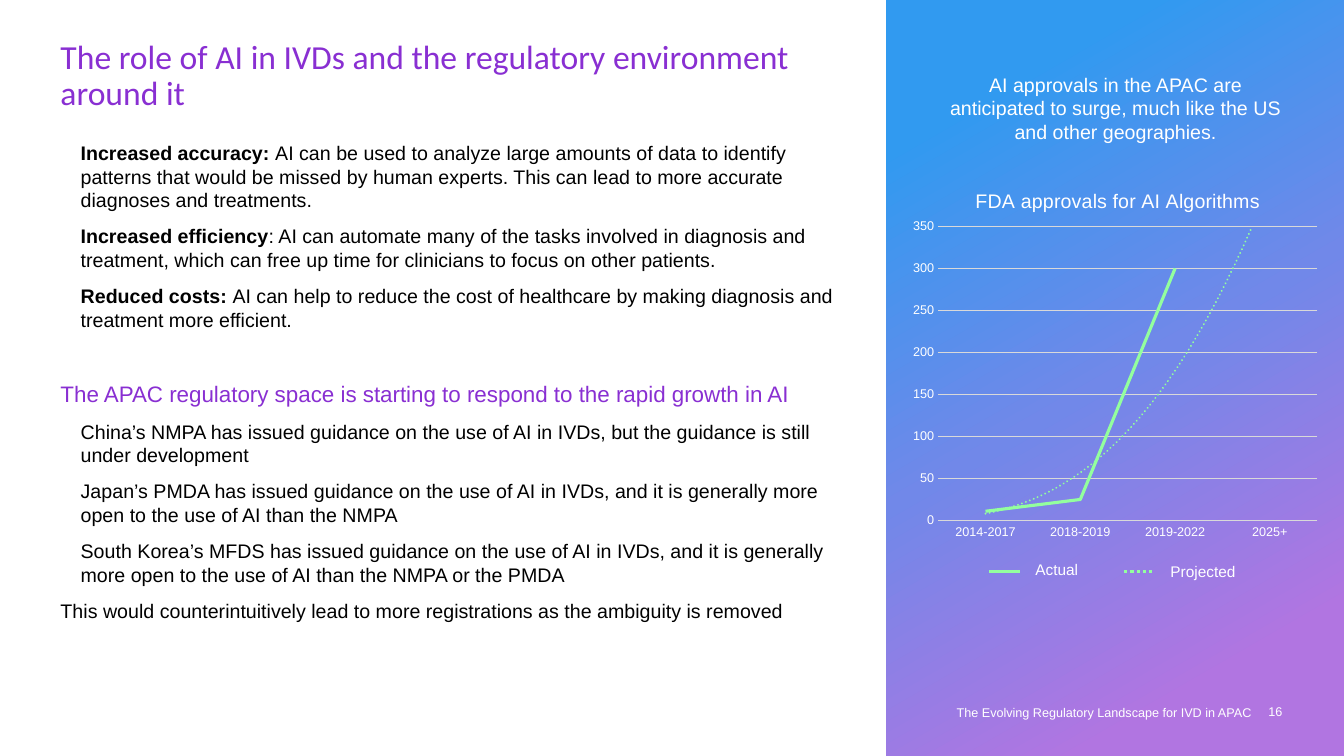
from copy import deepcopy

from lxml.etree import SubElement
from pptx import Presentation
from pptx.chart.data import CategoryChartData
from pptx.dml.color import RGBColor
from pptx.enum.chart import XL_CHART_TYPE, XL_TICK_MARK
from pptx.enum.dml import MSO_LINE
from pptx.enum.shapes import MSO_CONNECTOR, MSO_SHAPE
from pptx.enum.text import MSO_ANCHOR, MSO_AUTO_SIZE, PP_ALIGN
from pptx.oxml import parse_xml
from pptx.oxml.ns import nsdecls, qn
from pptx.util import Inches, Pt

COLORS = {"purple": "892FD2", "black": "000000", "white": "FFFFFF", "green": "93FF9E",
          "grid": "D9D9D9", "sky": "319AF0", "periwinkle": "7188E9", "lilac": "B175E1"}
BENEFITS = [
    ("Increased accuracy: ", "AI can be used to analyze large amounts of data to identify patterns that "
     "would be missed by human experts. This can lead to more accurate diagnoses and treatments."),
    ("Increased efficiency", ": AI can automate many of the tasks involved in diagnosis and treatment, "
     "which can free up time for clinicians to focus on other patients."),
    ("Reduced costs: ", "AI can help to reduce the cost of healthcare by making diagnosis and treatment "
     "more efficient."),
]
REGULATORS = [
    "China’s NMPA has issued guidance on the use of AI in IVDs, but the guidance is still under development",
    "Japan’s PMDA has issued guidance on the use of AI in IVDs, and it is generally more open to the use "
    "of AI than the NMPA",
    "South Korea’s MFDS has issued guidance on the use of AI in IVDs, and it is generally more open to the "
    "use of AI than the NMPA or the PMDA",
]


def rgb(name):
    """Return the palette colour with this name."""
    return RGBColor.from_string(COLORS[name])


def style_font(font, size, color, bold=False, face="Arial"):
    """Format one font."""
    font.size, font.bold, font.name = Pt(size), bold, face
    font.color.rgb = rgb(color)


def write(paragraph, text, lead="", size=14, color="black", face="Arial",
          align=PP_ALIGN.LEFT, before=0, indent=0):
    """Fill a paragraph with text after an optional bold lead."""
    paragraph.alignment, paragraph.space_before = align, Pt(before)
    if indent:
        paragraph._p.get_or_add_pPr().set("marL", str(Inches(indent)))
    for words, bold in ((lead, True), (text, False)):
        if words:
            run = paragraph.add_run()
            run.text = words
            style_font(run.font, size, color, bold, face)


def set_layout(holder, **fractions):
    """Place a chart part by fractions of the chart area."""
    layout = holder.find(qn("c:layout"))
    if layout is None:
        layout = SubElement(holder, qn("c:layout"))
    text = holder.find(qn("c:tx"))
    if text is None:
        holder.insert(0, layout)
    else:
        text.addnext(layout)
    manual = SubElement(layout, qn("c:manualLayout"))
    if "w" in fractions:
        SubElement(manual, qn("c:layoutTarget")).set("val", "inner")
    for side in "xy":
        SubElement(manual, qn(f"c:{side}Mode")).set("val", "edge")
    for side, value in fractions.items():
        SubElement(manual, qn(f"c:{side}")).set("val", str(value))


class SlideBuilder:
    """Holds the current slide and its style."""

    def __init__(self, slide):
        """Keep the slide to build on."""
        self.slide = slide

    def title(self, text, left, top, width, height):
        """Place and fill the title."""
        title = self.slide.shapes.title
        title.left, title.top, title.width, title.height = map(Inches, (left, top, width, height))
        frame = self.frame(title, 0, MSO_ANCHOR.TOP)
        frame.paragraphs[0].line_spacing = 0.9
        write(frame.paragraphs[0], text, size=24, color="purple", face="Calibri")

    def frame(self, shape, inset, anchor):
        """Set wrapping, insets and anchor of a text frame."""
        frame = shape.text_frame
        frame.word_wrap, frame.auto_size = True, MSO_AUTO_SIZE.NONE
        frame.vertical_anchor = anchor
        frame.margin_left = frame.margin_right = Inches(inset)
        frame.margin_top = frame.margin_bottom = Inches(inset / 2)
        return frame

    def text(self, paragraphs, left, top, width, height, inset=0.1, anchor=MSO_ANCHOR.TOP):
        """Add a text box from a list of paragraph formats."""
        box = self.slide.shapes.add_textbox(*map(Inches, (left, top, width, height)))
        frame = self.frame(box, inset, anchor)
        for index, content in enumerate(paragraphs):
            write(frame.add_paragraph() if index else frame.paragraphs[0], **content)

    def panel(self, left, top, width, height, colors, angle):
        """Add a rectangle with a three-stop gradient."""
        panel = self.slide.shapes.add_shape(MSO_SHAPE.RECTANGLE, *map(Inches, (left, top, width, height)))
        panel.shadow.inherit = False
        panel.line.fill.background()
        panel.fill.gradient()
        panel.fill.gradient_angle = angle
        stop_list = panel._element.spPr.find(qn("a:gradFill")).find(qn("a:gsLst"))
        stop_list.append(deepcopy(stop_list[-1]))
        for stop, color, position in zip(panel.fill.gradient_stops, colors, (0.15, 0.5, 0.85)):
            stop.color.rgb, stop.position = rgb(color), position

    def legend_key(self, left, top, length, dash=None):
        """Add a short line for the legend."""
        key = self.slide.shapes.add_connector(
            MSO_CONNECTOR.STRAIGHT, *map(Inches, (left, top, left + length, top)))
        key.line.color.rgb, key.line.width = rgb("green"), Pt(2.25)
        if dash:
            key.line.dash_style = dash
        SubElement(key._element.spPr, qn("a:effectLst"))

    def approvals_chart(self, heading, periods, approvals, left, top, width, height):
        """Add the approvals line chart with its power trend."""
        data = CategoryChartData()
        data.categories = periods
        data.add_series("Series 1", approvals)
        chart = self.slide.shapes.add_chart(
            XL_CHART_TYPE.LINE, *map(Inches, (left, top, width, height)), data).chart
        style_font(chart.font, 10, "black")
        chart.has_legend = False
        chart.has_title = True
        write(chart.chart_title.text_frame.paragraphs[0], heading, color="white", align=PP_ALIGN.CENTER)
        chart.chart_title.include_in_layout = False
        set_layout(chart.chart_title._element, x=0.16, y=0.05)
        set_layout(chart._chartSpace.chart.plotArea, x=0.08, y=0.16, w=0.9, h=0.77)
        for axis in (chart.category_axis, chart.value_axis):
            axis.major_tick_mark = axis.minor_tick_mark = XL_TICK_MARK.NONE
            style_font(axis.tick_labels.font, 9, "white")
        values = chart.value_axis
        values.minimum_scale, values.maximum_scale, values.major_unit = 0, 350, 50
        values.format.line.fill.background()
        for line in (values.major_gridlines.format.line, chart.category_axis.format.line):
            line.color.rgb, line.width = rgb("grid"), Pt(0.75)
        plot = chart.plots[0]
        plot.vary_by_categories = False
        actual = plot.series[0]
        actual.smooth = False
        actual.format.line.color.rgb, actual.format.line.width = rgb("green"), Pt(2.25)
        actual._element.find(qn("c:cat")).addprevious(parse_xml(
            f'<c:trendline {nsdecls("c", "a")}><c:spPr><a:ln w="{Pt(1.5)}" cap="rnd"><a:solidFill>'
            f'<a:srgbClr val="{COLORS["green"]}"/></a:solidFill><a:prstDash val="sysDot"/></a:ln></c:spPr>'
            '<c:trendlineType val="power"/><c:forward val="1"/><c:dispRSqr val="0"/>'
            '<c:dispEq val="0"/></c:trendline>'))


def main():
    """Build and save the slide."""
    deck = Presentation()
    deck.slide_width, deck.slide_height = Inches(13.33), Inches(7.5)
    page = SlideBuilder(deck.slides.add_slide(deck.slide_layouts[5]))
    page.panel(8.79, 0, 4.54, 7.5, ("sky", "periwinkle", "lilac"), 300)
    page.title("The role of AI in IVDs and the regulatory environment around it", 0.6, 0.4, 7.62, 0.75)

    story = [dict(lead=lead, text=text, indent=0.2, before=9 if index else 0)
             for index, (lead, text) in enumerate(BENEFITS)]
    story.append(dict(text="The APAC regulatory space is starting to respond to the rapid growth in AI",
                      size=16, color="purple", before=35))
    story += [dict(text=text, indent=0.2, before=9) for text in REGULATORS]
    story.append(dict(text="This would counterintuitively lead to more registrations as the ambiguity "
                           "is removed", before=9))
    page.text(story, 0.6, 1.4, 7.88, 5.1, inset=0)

    page.text([dict(text="16", size=9, color="white")], 12.58, 6.94, 0.24, 0.24,
              inset=0, anchor=MSO_ANCHOR.MIDDLE)
    page.text([dict(text="The Evolving Regulatory Landscape for IVD in APAC", size=9, color="white",
                    align=PP_ALIGN.RIGHT)], 8.91, 6.94, 3.6, 0.24)
    page.text([dict(text="AI approvals in the APAC are anticipated to surge, much like the US and other "
                         "geographies.", color="white", align=PP_ALIGN.CENTER)], 9.31, 0.67, 3.51, 0.81)
    page.approvals_chart("FDA approvals for AI Algorithms",
                         ("2014-2017", "2018-2019", "2019-2022", "2025+"), (11, 25, 300, None),
                         8.97, 1.64, 4.18, 3.79)
    for label, left, top, width, dash in (("Actual", 9.81, 5.51, 0.68, None),
                                          ("Projected", 11.15, 5.53, 0.99, MSO_LINE.ROUND_DOT)):
        page.legend_key(left, 5.67, 0.31, dash)
        page.text([dict(text=label, size=11, color="white")], left + 0.36, top, width, 0.25)
    deck.save("out.pptx")


if __name__ == "__main__":
    main()
